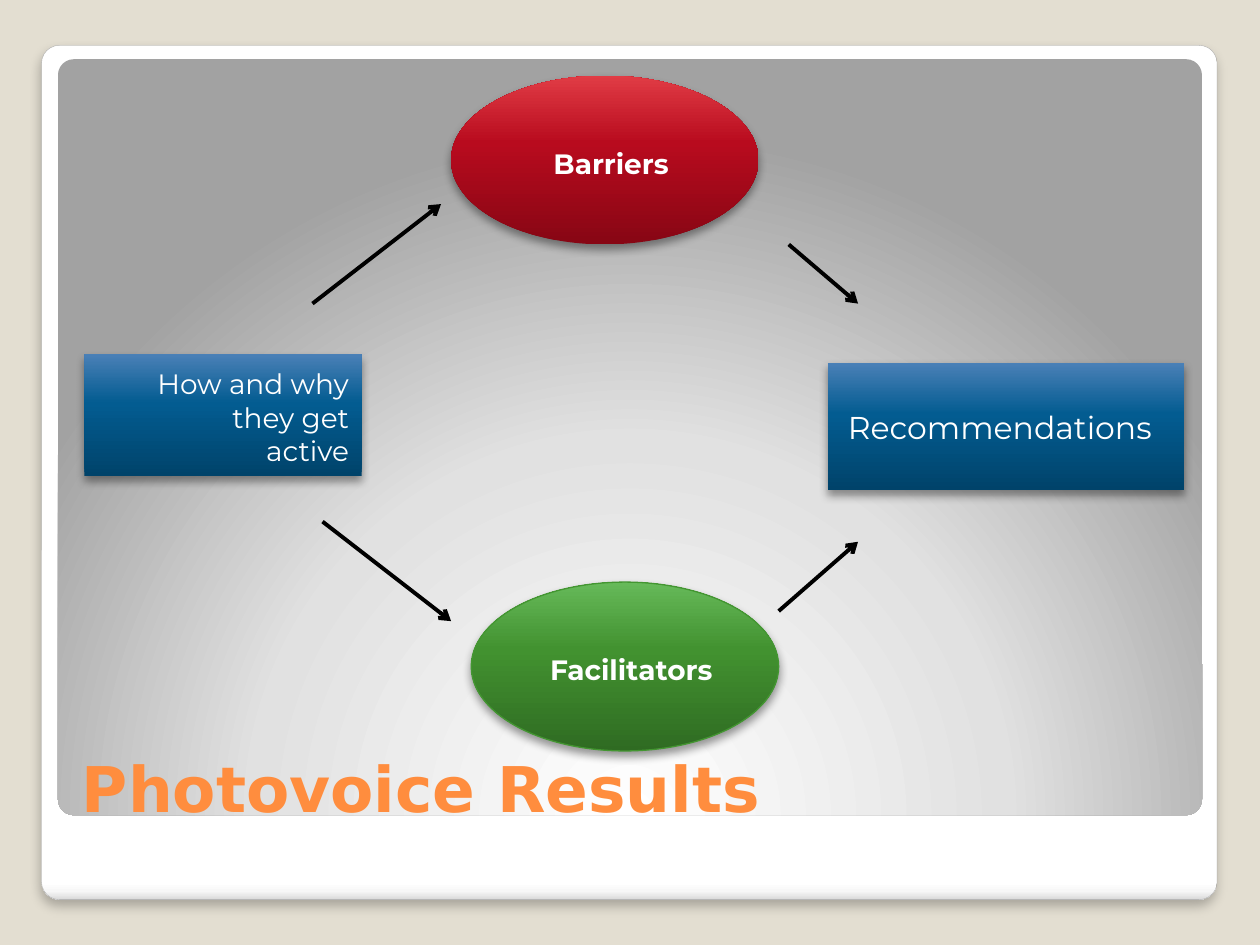
from lxml.etree import SubElement
from pptx import Presentation
from pptx.dml.color import RGBColor
from pptx.enum.shapes import MSO_CONNECTOR, MSO_SHAPE
from pptx.enum.text import MSO_ANCHOR, MSO_AUTO_SIZE, PP_ALIGN
from pptx.oxml.ns import qn
from pptx.util import Inches, Pt

HEX = {"page": "E3DED1", "edge": "A4A4A4", "title": "FF8D3E", "text": "FFFFFF",
       "arrow": "000000", "rim": "439631"}
# Gradient stops: percent -> colour
FADE = {
    "card": {0: "FFFFFF", 98: "FFFFFF", 99: "F7F7F7", 100: "DADADA"},
    "panel": {0: "FFFFFF", 55: "E1E1E1", 100: "A2A2A2"},
    "red": {0: "870614", 60: "B80B1E", 100: "E13C45"},
    "blue": {0: "00436A", 60: "035C91", 100: "4A80B7"},
    "green": {0: "2F6B22", 60: "429230", 100: "66B959"},
}
FONT = "Montserrat"


def rgb(name):
    return RGBColor.from_string(HEX[name])


def part(box, x, y, w, h):
    """A box inside another one, in percent of its size."""
    left, top, wide, high = box
    return (int(left + wide * x / 100), int(top + high * y / 100),
            int(wide * w / 100), int(high * h / 100))


def place(shape, box):
    shape.left, shape.top, shape.width, shape.height = box


def add(node, tag, **attrs):
    return SubElement(node, qn(tag), {k: str(v) for k, v in attrs.items()})


def fade(shape, name, angle=270, focus=None):
    """Gradient fill: linear at an angle, or round about a focus rectangle."""
    shape.fill.gradient()
    grad = shape._element.spPr.find(qn("a:gradFill"))
    for child in list(grad):
        grad.remove(child)
    stops = add(grad, "a:gsLst")
    for spot, tone in FADE[name].items():
        add(add(stops, "a:gs", pos=spot * 1000), "a:srgbClr", val=tone)
    if focus:
        sides = {k: v * 1000 for k, v in zip("ltrb", focus)}
        add(add(grad, "a:path", path="circle"), "a:fillToRect", **sides)
    else:
        add(grad, "a:lin", ang=angle * 60000, scaled=0)


def edge(shape, tone=None, width=0.75):
    if tone:
        shape.line.color.rgb = rgb(tone)
        shape.line.width = Pt(width)
    else:
        shape.line.fill.background()


def shade(shape, alpha=40, blur=5.2, dist=3):
    shape.shadow.inherit = False
    effects = shape._element.spPr.find(qn("a:effectLst"))
    outer = add(effects, "a:outerShdw", blurRad=Pt(blur), dist=Pt(dist),
                dir=90 * 60000, algn="ctr", rotWithShape=0)
    add(add(outer, "a:srgbClr", val="000000"), "a:alpha", val=alpha * 1000)


def write(shape, text, size, align, anchor, font=FONT, tone="text",
          bold=False, inset=None, hang=0):
    frame = shape.text_frame
    frame.word_wrap = True
    frame.auto_size = MSO_AUTO_SIZE.NONE
    frame.vertical_anchor = anchor
    if inset:
        (frame.margin_left, frame.margin_top,
         frame.margin_right, frame.margin_bottom) = map(Inches, inset)
    para = frame.paragraphs[0]
    para.alignment = align
    para.space_before = Pt(2.5 if hang else 0)
    props = para._p.get_or_add_pPr()
    props.set("marL", str(Inches(hang)))
    props.set("indent", str(-Inches(hang)))
    add(props, "a:buNone")
    run = para.add_run()
    run.text = text
    run.font.name, run.font.size, run.font.bold = font, Pt(size), bold
    run.font.color.rgb = rgb(tone)


def backdrop(slide, box):
    # White card with a round-shaded panel inside
    card = slide.shapes.add_shape(MSO_SHAPE.ROUNDED_RECTANGLE, *box)
    panel = slide.shapes.add_shape(MSO_SHAPE.ROUNDED_RECTANGLE,
                                   *part(box, 1.39, 1.62, 97.32, 88.5))
    for shape in (card, panel):
        shape.adjustments[0] = 0.021
    fade(card, "card", 90)
    edge(card, "edge", 0.16)
    shade(card, 25, 6, 4)
    fade(panel, "panel", focus=(50, 175, 50, -75))
    edge(panel)
    panel.shadow.inherit = False


def heading(slide, box):
    title = slide.shapes.title
    slide.shapes._spTree.append(title._element)  # bring in front of the card
    place(title, box)
    write(title, "Photovoice Results", 36, PP_ALIGN.LEFT, MSO_ANCHOR.BOTTOM,
          "DejaVu Sans", "title", True)


def arrow(slide, box, x1, y1, x2, y2):
    start, end = part(box, x1, y1, 0, 0), part(box, x2, y2, 0, 0)
    line = slide.shapes.add_connector(MSO_CONNECTOR.STRAIGHT, *start[:2], *end[:2])
    line.line.color.rgb = rgb("arrow")
    line.line.width = Pt(2.25)
    add(line.line._get_or_add_ln(), "a:tailEnd", type="arrow")
    add(line._element.spPr, "a:effectLst")


def diagram(slide, box):
    inset, hang = (0.2, 0.1, 0.1, 0.05), 0.56

    # Starting point, in the body placeholder
    cause = slide.placeholders[1]
    slide.shapes._spTree.append(cause._element)
    place(cause, part(box, 6.7, 37.47, 22, 12.93))
    fade(cause, "blue")
    shade(cause)
    write(cause, "How and why they get active", 16, PP_ALIGN.RIGHT,
          MSO_ANCHOR.TOP, inset=inset, hang=hang)

    # Two themes
    for text, x, y, tone, rim in (("Barriers", 35.8, 8, "red", None),
                                  ("Facilitators", 37.4, 61.6, "green", "rim")):
        oval = slide.shapes.add_shape(MSO_SHAPE.OVAL, *part(box, x, y, 24.4, 17.87))
        fade(oval, tone)
        edge(oval, rim)
        shade(oval)
        write(oval, text, 16, PP_ALIGN.CENTER, MSO_ANCHOR.MIDDLE,
              bold=True, inset=inset, hang=hang)

    # Outcome
    goal = slide.shapes.add_shape(MSO_SHAPE.RECTANGLE,
                                  *part(box, 65.7, 38.4, 28.3, 13.47))
    fade(goal, "blue")
    edge(goal)
    shade(goal)
    write(goal, "Recommendations", 18, PP_ALIGN.LEFT, MSO_ANCHOR.MIDDLE,
          inset=(0.16, 0.05, 0.1, 0.05))

    # Arrows between the steps
    for ends in ((24.8, 32.13, 35, 21.6), (25.6, 55.2, 35.8, 65.73),
                 (62.6, 25.87, 68.1, 32.13), (61.8, 64.67, 68.1, 57.33)):
        arrow(slide, box, *ends)


def main():
    deck = Presentation()
    deck.slide_width, deck.slide_height = Inches(10), Inches(7.5)
    page = (0, 0, deck.slide_width, deck.slide_height)
    slide = deck.slides.add_slide(deck.slide_layouts[1])
    slide.background.fill.solid()
    slide.background.fill.fore_color.rgb = rgb("page")
    backdrop(slide, part(page, 3.3, 4.8, 93.3, 90.4))
    heading(slide, part(page, 5.5, 72.67, 89.5, 15.33))
    diagram(slide, page)
    deck.save("out.pptx")


if __name__ == "__main__":
    main()
